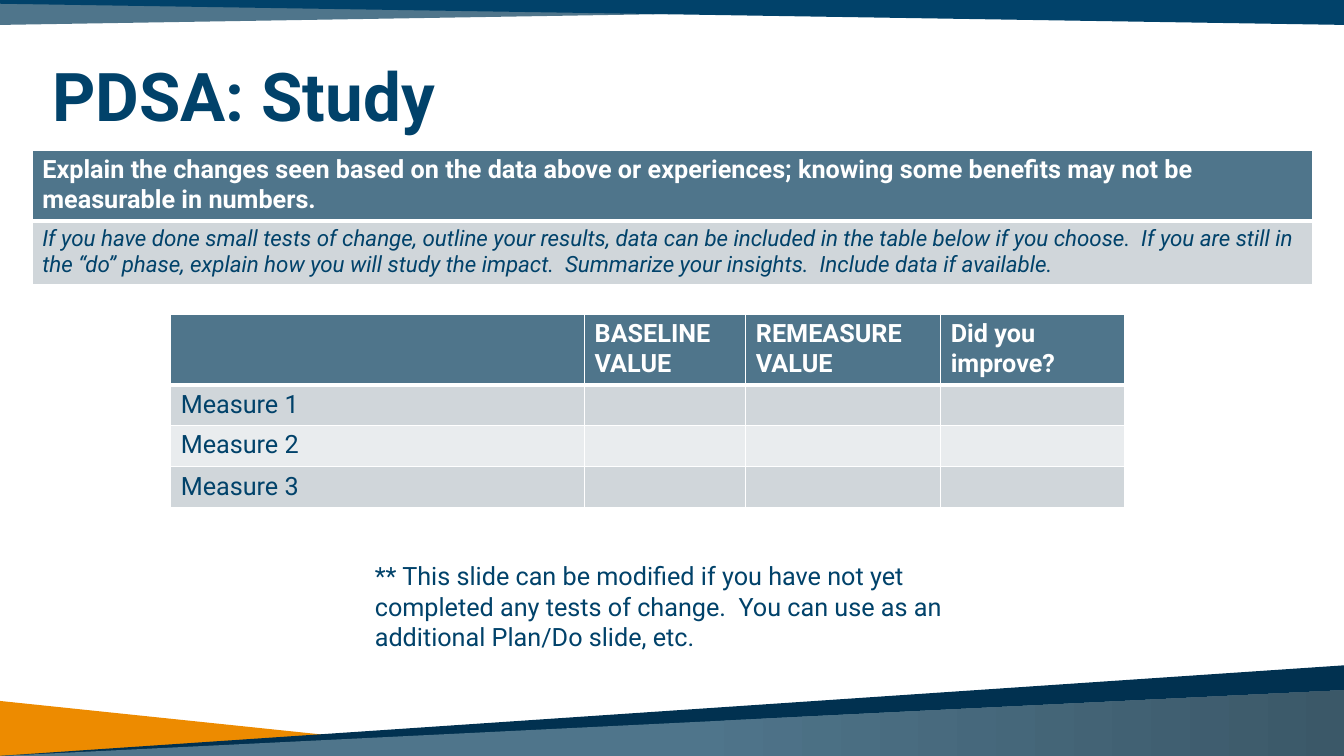
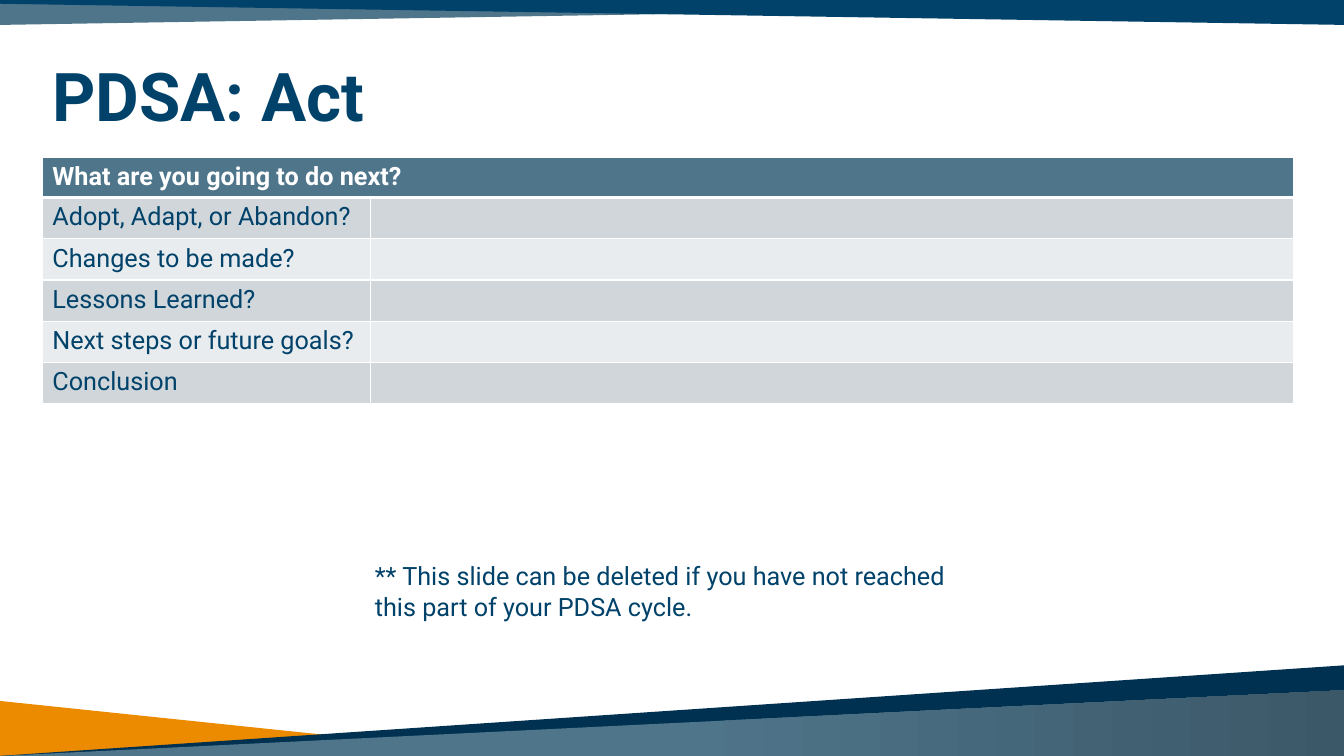
from dataclasses import dataclass
from itertools import zip_longest

from lxml import etree
from pptx import Presentation
from pptx import util as u
from pptx.dml.color import RGBColor
from pptx.enum import text
from pptx.oxml.ns import qn


@dataclass(frozen=True)
class Theme:
    font: str = "Roboto"
    navy: str = "01426A"
    deep_navy: str = "013150"
    slate: str = "4F758B"
    dark_slate: str = "3B5868"
    orange: str = "ED8B00"
    white: str = "FFFFFF"
    bands: tuple = ("D0D6DA", "E9ECEE")
    title_size: int = 48
    body_size: int = 18
    hint_size: int = 16
    thin: int = 1
    thick: int = 3


theme = Theme()
deck = Presentation()
deck.slide_width, deck.slide_height = u.Inches(13.33), u.Inches(7.5)

# Grid: 100 columns by 100 rows, so lengths are percentages of the slide
column, row = deck.slide_width / 100, deck.slide_height / 100


def style(paragraphs, size, color, bold=False, italic=False):
    for paragraph in paragraphs:
        font = paragraph.font
        font.name, font.size = theme.font, u.Pt(size)
        font.bold, font.italic = bold, italic
        font.color.rgb = RGBColor.from_string(color)


def add_banded_table(slide, left, top, widths, heights, rows, size=theme.body_size, italic=False):
    table = slide.shapes.add_table(
        len(heights), len(widths), int(left * column), int(top * row),
        int(sum(widths) * column), int(sum(heights) * row)).table
    table.horz_banding = False
    for table_column, width in zip(table.columns, widths):
        table_column.width = int(width * column)
    for r, (height, labels) in enumerate(zip(heights, rows)):
        table.rows[r].height = int(height * row)
        header = r == 0
        fill = theme.slate if header else theme.bands[(r - 1) % 2]
        # White rules, with a heavy one below the header
        rules = {"a:lnL": theme.thin, "a:lnR": theme.thin,
                 "a:lnT": theme.thick if r == 1 else theme.thin,
                 "a:lnB": theme.thick if header else theme.thin}
        for cell, label in zip_longest(table.rows[r].cells, labels, fillvalue=""):
            cell.text = label
            style(cell.text_frame.paragraphs, theme.body_size if header else size,
                  theme.white if header else theme.navy, header, italic and not header)
            cell.fill.solid()
            cell.fill.fore_color.rgb = RGBColor.from_string(fill)
            properties = cell._tc.get_or_add_tcPr()
            for position, (side, points) in enumerate(rules.items()):
                line = etree.Element(qn(side), w=str(u.Pt(points)))
                solid = etree.SubElement(line, qn("a:solidFill"))
                etree.SubElement(solid, qn("a:srgbClr"), val=theme.white)
                properties.insert(position, line)
    # A lone heading spans all columns
    if len(rows[0]) < len(widths):
        table.cell(0, 0).merge(table.cell(0, len(widths) - 1))


# Slides with their titles and closing notes
title_only = deck.slide_layouts[5]
slides = []
for heading, note, note_height in (
    ("PDSA: Study", "** This slide can be modified if you have not yet completed any tests of "
     "change.  You can use as an additional Plan/Do slide, etc.", 13.5),
    ("PDSA: Act", "** This slide can be deleted if you have not reached this part of your "
     "PDSA cycle.", 9.5),
):
    slide = deck.slides.add_slide(title_only)
    slides.append(slide)
    title = slide.shapes.title
    title.left, title.top = int(3.15 * column), int(7.6 * row)
    title.width, title.height = int(80.6 * column), int(11.2 * row)
    title.text = heading
    title.text_frame.auto_size = text.MSO_AUTO_SIZE.NONE
    title.text_frame.vertical_anchor = text.MSO_ANCHOR.MIDDLE
    title_line = title.text_frame.paragraphs[0]
    title_line.alignment, title_line.line_spacing = text.PP_ALIGN.LEFT, 0.9
    style([title_line], theme.title_size, theme.navy, bold=True)

    remark = slide.shapes.add_textbox(
        int(27.15 * column), int(73.5 * row), int(44.85 * column), int(note_height * row)).text_frame
    remark.word_wrap = True
    remark.auto_size = text.MSO_AUTO_SIZE.SHAPE_TO_FIT_TEXT
    remark.text = note
    style(remark.paragraphs, theme.body_size, theme.navy)

study, act = slides

# Wedges along the top and bottom edges, kept once in the shared layout
wedges = (
    ((theme.orange,), [(-0.1, 92.7), (-0.1, 100), (39.3, 100)]),
    ((theme.deep_navy,), [(100.1, 88), (-0.1, 100), (100.1, 100)]),
    ((theme.slate, theme.dark_slate), [(100.1, 91.3), (-0.1, 100), (100.1, 100)]),
    ((theme.slate,), [(43, -0.3), (100.1, 0), (100.1, 0.4), (0, 3.3), (0, -0.3)]),
    ((theme.navy,), [(0, -0.3), (0, 0.5), (100.1, 3.3), (100.1, -0.3)]),
)
layout_tree = title_only.element.cSld.spTree
for index, (colors, corners) in enumerate(wedges):
    points = [(int(x * column), int(y * row)) for x, y in corners]
    outline = study.shapes.build_freeform(*points[0])
    outline.add_line_segments(points[1:], close=True)
    wedge = outline.convert_to_shape()
    wedge.shadow.inherit = False
    wedge.line.fill.background()
    if len(colors) == 1:
        wedge.fill.solid()
        wedge.fill.fore_color.rgb = RGBColor.from_string(colors[0])
    else:
        wedge.fill.gradient()
        wedge.fill.gradient_angle = 0
        for stop, color, position in zip(wedge.fill.gradient_stops, colors, (0.51, 1)):
            stop.color.rgb = RGBColor.from_string(color)
            stop.position = position
    wedge.element.nvSpPr.cNvPr.id = 20 + index
    layout_tree.insert(2 + index, wedge.element)

# Study: measures, and the explanation above them
add_banded_table(
    study, 12.7, 41.6, [30.8, 12, 14.5, 13.7], [9.1, 5.2, 5.45, 5.45],
    [["", "BASELINE\nVALUE", "REMEASURE\nVALUE", "Did you improve?"],
     ["Measure 1"], ["Measure 2"], ["Measure 3"]])
add_banded_table(
    study, 2.4, 19.9, [95.25], [9.2, 8],
    [["Explain the changes seen based on the data above or experiences; knowing some "
      "benefits may not be measurable in numbers."],
     ["If you have done small tests of change, outline your results, data can be included in "
      "the table below if you choose.  If you are still in the “do” phase, explain how you "
      "will study the impact.  Summarize your insights.  Include data if available."]],
    size=theme.hint_size, italic=True)

# Act: next steps
add_banded_table(
    act, 3.15, 20.8, [24.4, 68.7], [5.2] + [5.45] * 5,
    [["What are you going to do next?"], ["Adopt, Adapt, or Abandon?"], ["Changes to be made?"],
     ["Lessons Learned?"], ["Next steps or future goals?"], ["Conclusion"]])

deck.save("out.pptx")
